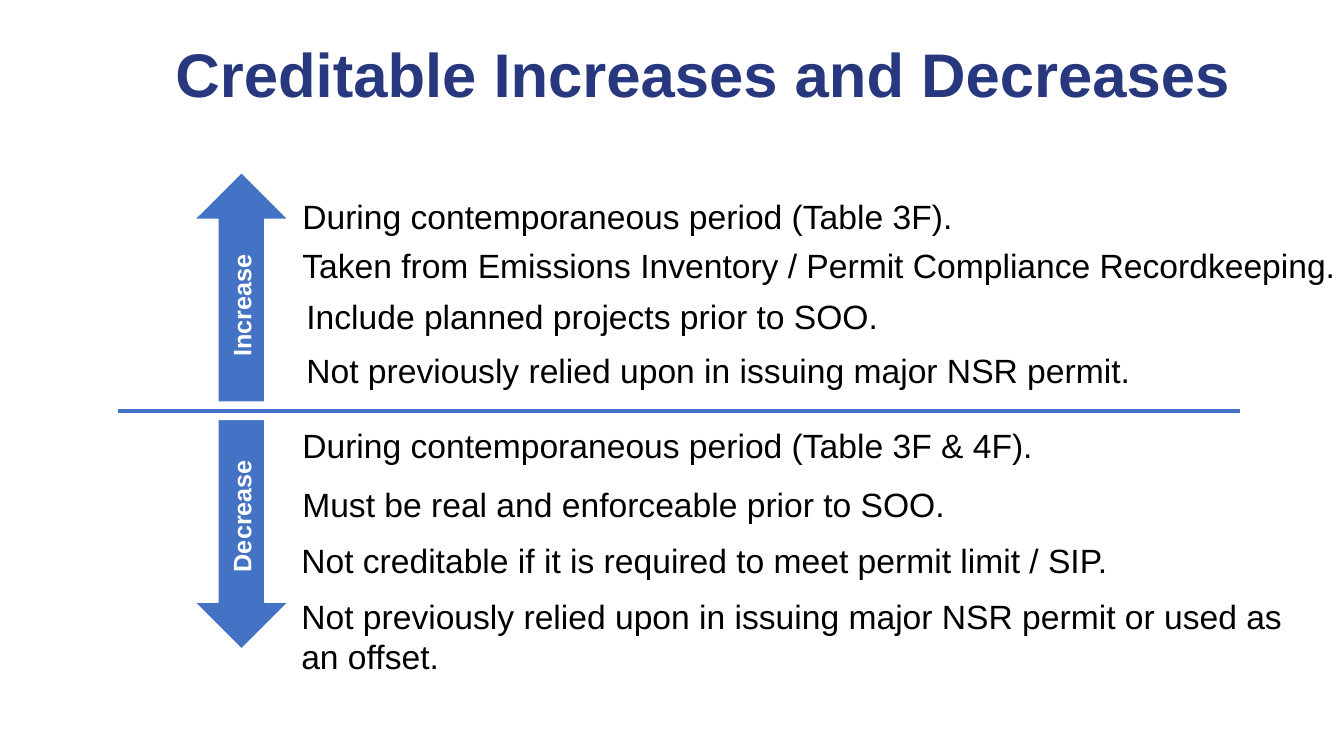
from dataclasses import dataclass

from lxml.etree import SubElement
from pptx import Presentation
from pptx.dml.color import RGBColor
from pptx.enum.shapes import MSO_CONNECTOR, MSO_SHAPE
from pptx.enum.text import MSO_ANCHOR, MSO_AUTO_SIZE, PP_ALIGN
from pptx.oxml.ns import qn
from pptx.util import Inches, Pt


@dataclass(frozen=True)
class Theme:
    font: str = "Arial"
    navy: RGBColor = RGBColor(0x27, 0x38, 0x7E)
    blue: RGBColor = RGBColor(0x44, 0x72, 0xC4)
    black: RGBColor = RGBColor(0, 0, 0)
    white: RGBColor = RGBColor(255, 255, 255)
    title_size: Pt = Pt(44)
    body_size: Pt = Pt(24)
    label_size: Pt = Pt(18)


THEME = Theme()

# Each statement: left, top, width, height, text
INCREASE_RULES = [
    (2.9, 1.89, 6.72, 0.5, "During contemporaneous period (Table 3F)."),
    (2.9, 2.38, 10.46, 0.5,
     "Taken from Emissions Inventory / Permit Compliance Recordkeeping."),
    (2.94, 2.89, 8.38, 0.5, "Include planned projects prior to SOO."),
    (2.94, 3.42, 8.59, 0.5,
     "Not previously relied upon in issuing major NSR permit."),
]
DECREASE_RULES = [
    (2.9, 4.17, 7.52, 0.5, "During contemporaneous period (Table 3F & 4F)."),
    (2.9, 4.75, 6.64, 0.5, "Must be real and enforceable prior to SOO."),
    (2.89, 5.31, 8.28, 0.5,
     "Not creditable if it is required to meet permit limit / SIP."),
    (2.89, 5.86, 9.98, 0.91,
     "Not previously relied upon in issuing major NSR permit or used as an offset."),
]


def write_text(frame, text, size, color, bold=False, align=PP_ALIGN.LEFT):
    frame.word_wrap = True
    paragraph = frame.paragraphs[0]
    paragraph.text = text
    paragraph.alignment = align
    paragraph.font.name = THEME.font
    paragraph.font.size = size
    paragraph.font.bold = bold
    paragraph.font.color.rgb = color
    return paragraph


def set_title(slide, text):
    title = slide.shapes.title
    title.left, title.top = Inches(1.64), Inches(0.48)
    title.width, title.height = Inches(11.58), Inches(0.57)
    frame = title.text_frame
    frame.auto_size = MSO_AUTO_SIZE.NONE
    frame.vertical_anchor = MSO_ANCHOR.MIDDLE
    paragraph = write_text(frame, text, THEME.title_size, THEME.navy, bold=True)
    paragraph.line_spacing = 0.9


def add_statement(slide, left, top, width, height, text):
    box = slide.shapes.add_textbox(
        Inches(left), Inches(top), Inches(width), Inches(height))
    write_text(box.text_frame, text, THEME.body_size, THEME.black)


def add_filled_shape(group, kind, left, top, width, height, rotation):
    shape = group.shapes.add_shape(
        kind, Inches(left), Inches(top), Inches(width), Inches(height))
    shape.rotation = rotation
    shape.shadow.inherit = False
    shape.fill.solid()
    shape.fill.fore_color.rgb = THEME.blue
    return shape


def add_labelled_arrow(slide, top, rotation, label_top, text):
    group = slide.shapes.add_group_shape()
    arrow = add_filled_shape(
        group, MSO_SHAPE.UP_ARROW, 1.93, top, 0.93, 2.28, rotation)
    arrow.line.color.rgb = THEME.white
    arrow.line.width = Pt(1)
    label = add_filled_shape(
        group, MSO_SHAPE.RECTANGLE, 1.6, label_top, 1.59, 0.4, 270)
    label.line.fill.background()
    label.text_frame.vertical_anchor = MSO_ANCHOR.TOP
    write_text(label.text_frame, text, THEME.label_size, THEME.white,
               bold=True, align=PP_ALIGN.CENTER)


def add_divider(slide, left, right, height):
    line = slide.shapes.add_connector(
        MSO_CONNECTOR.STRAIGHT,
        Inches(left), Inches(height), Inches(right), Inches(height))
    line.line.color.rgb = THEME.blue
    line.line.width = Pt(3)
    SubElement(line._element.spPr, qn("a:effectLst"))


def main():
    presentation = Presentation()
    presentation.slide_width = Inches(13.33)
    presentation.slide_height = Inches(7.5)
    slide = presentation.slides.add_slide(presentation.slide_layouts[5])
    set_title(slide, "Creditable Increases and Decreases")

    # Increases above the divider, decreases below
    add_labelled_arrow(slide, 1.71, 0, 2.83, "Increase")
    add_divider(slide, 1.17, 12.3, 4.08)
    add_labelled_arrow(slide, 4.16, 180, 4.92, "Decrease")
    for statement in INCREASE_RULES + DECREASE_RULES:
        add_statement(slide, *statement)

    presentation.save("out.pptx")


if __name__ == "__main__":
    main()
